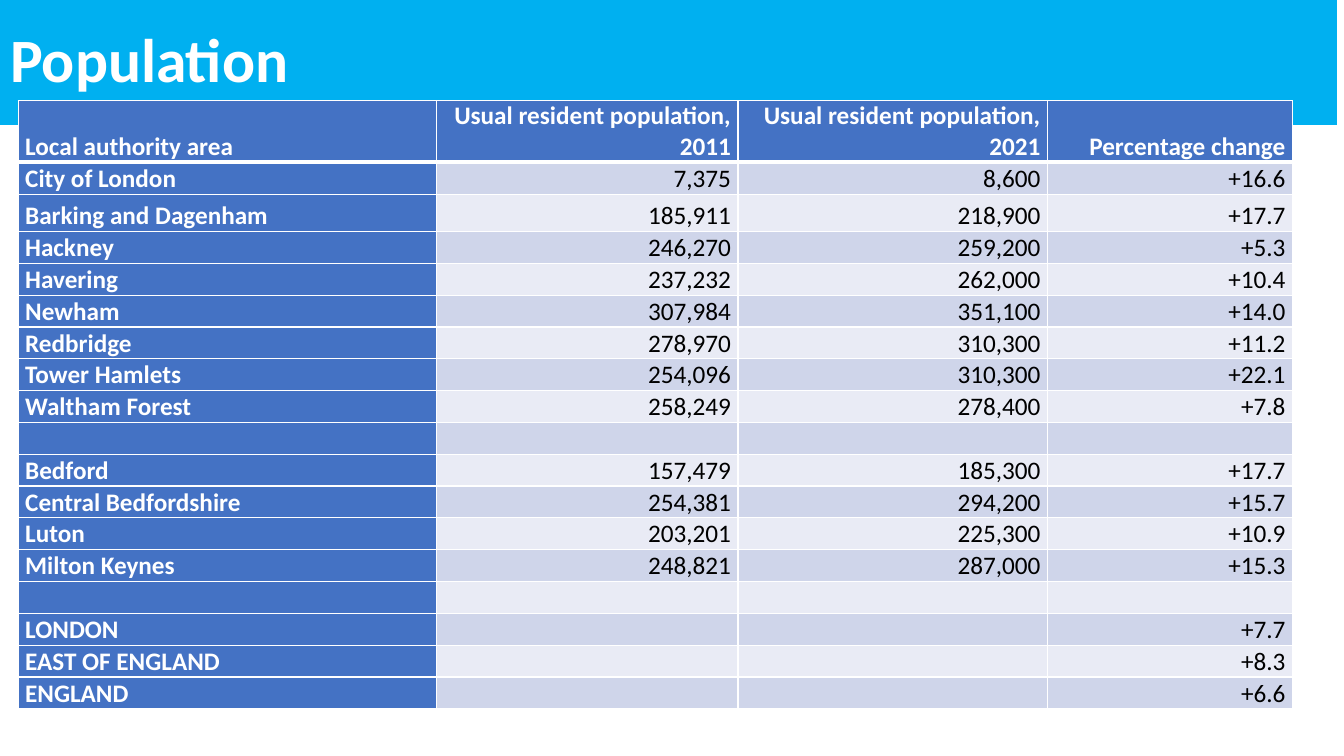
from lxml import etree
from pptx import Presentation
from pptx import util as u
from pptx.dml.color import RGBColor
from pptx.enum import text
from pptx.oxml.ns import qn

# Content
TITLE = "Population"
HEADER = ("Local authority area", "Usual resident population, 2011",
          "Usual resident population, 2021", "Percentage change")
BLANK = ("", "", "", "")
AREAS = [
    ("City of London", "7,375", "8,600", "+16.6"),
    ("Barking and Dagenham", "185,911", "218,900", "+17.7"),
    ("Hackney", "246,270", "259,200", "+5.3"),
    ("Havering", "237,232", "262,000", "+10.4"),
    ("Newham", "307,984", "351,100", "+14.0"),
    ("Redbridge", "278,970", "310,300", "+11.2"),
    ("Tower Hamlets", "254,096", "310,300", "+22.1"),
    ("Waltham Forest", "258,249", "278,400", "+7.8"),
    BLANK,
    ("Bedford", "157,479", "185,300", "+17.7"),
    ("Central Bedfordshire", "254,381", "294,200", "+15.7"),
    ("Luton", "203,201", "225,300", "+10.9"),
    ("Milton Keynes", "248,821", "287,000", "+15.3"),
    BLANK,
    ("LONDON", "", "", "+7.7"),
    ("EAST OF ENGLAND", "", "", "+8.3"),
    ("ENGLAND", "", "", "+6.6"),
]
ROWS = [HEADER] + AREAS

# Layout and colours
COLUMN_WIDTHS = (4.15, 2.99, 3.07, 2.43)
ROW_HEIGHT = 0.316
SPECIAL_HEIGHTS = {0: 0.61, 2: 0.37}
FONT = "Calibri"
WHITE, BLACK = "FFFFFF", "000000"
BAND, HEADING = "00B0F0", "4472C4"
STRIPES = ("E9EBF5", "CFD5EA")


def paint(fill, color):
    fill.solid()
    fill.fore_color.rgb = RGBColor.from_string(color)


def add_run(paragraph, words, size, color, bold):
    run = paragraph.add_run()
    run.text = words
    run.font.name = FONT
    run.font.size = u.Pt(size)
    run.font.bold = bold
    paint(run.font.fill, color)


def add_border(cell, side, width):
    line = etree.SubElement(cell._tc.get_or_add_tcPr(), qn("a:ln" + side),
                            w=str(u.Pt(width)))
    fill = etree.SubElement(line, qn("a:solidFill"))
    etree.SubElement(fill, qn("a:srgbClr"), val=WHITE)


def fill_cell(cell, words, row, column):
    heading = row == 0 or column == 0
    cell.margin_left = cell.margin_right = u.Inches(0.07)
    cell.margin_top = cell.margin_bottom = 0
    cell.vertical_anchor = text.MSO_ANCHOR.BOTTOM
    # Borders go in before the fill; the rule under the header is thicker
    widths = {"L": 1, "R": 1, "T": 3 if row == 1 else 1, "B": 3 if row == 0 else 1}
    for side, width in widths.items():
        add_border(cell, side, width)
    paint(cell.fill, HEADING if heading else STRIPES[row % 2])
    if words:
        paragraph = cell.text_frame.paragraphs[0]
        paragraph.alignment = text.PP_ALIGN.RIGHT if column else text.PP_ALIGN.LEFT
        add_run(paragraph, words, 18, WHITE if heading else BLACK, heading)


def main():
    presentation = Presentation()
    presentation.slide_width = u.Inches(13.33)
    presentation.slide_height = u.Inches(7.5)
    slide = presentation.slides.add_slide(presentation.slide_layouts[5])

    # Title band
    title = slide.shapes.title
    title.left = title.top = 0
    title.width, title.height = u.Inches(13.26), u.Inches(1.24)
    paint(title.fill, BAND)
    title.text_frame.auto_size = text.MSO_AUTO_SIZE.NONE
    title.text_frame.vertical_anchor = text.MSO_ANCHOR.MIDDLE
    paragraph = title.text_frame.paragraphs[0]
    paragraph.alignment = text.PP_ALIGN.LEFT
    paragraph.line_spacing = 0.9
    add_run(paragraph, TITLE, 44, WHITE, True)

    # Population table
    heights = [SPECIAL_HEIGHTS.get(row, ROW_HEIGHT) for row in range(len(ROWS))]
    table = slide.shapes.add_table(
        len(ROWS), len(HEADER), u.Inches(0.18), u.Inches(1),
        u.Inches(sum(COLUMN_WIDTHS)), u.Inches(sum(heights))).table
    for column, width in enumerate(COLUMN_WIDTHS):
        table.columns[column].width = u.Inches(width)
    for row, values in enumerate(ROWS):
        table.rows[row].height = u.Inches(heights[row])
        for column, words in enumerate(values):
            fill_cell(table.cell(row, column), words, row, column)

    presentation.save("out.pptx")


if __name__ == "__main__":
    main()
